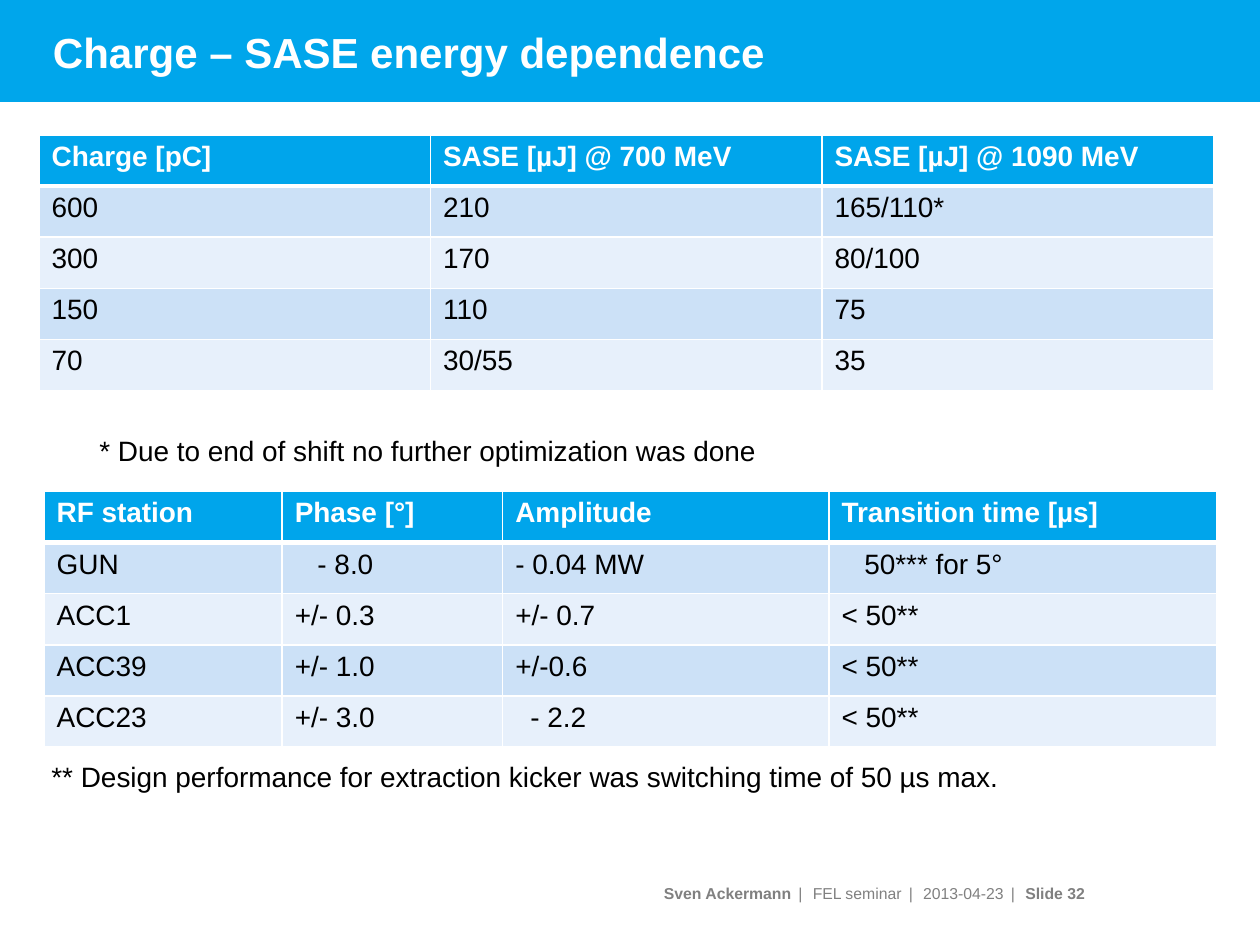
from dataclasses import dataclass

from lxml.etree import SubElement
from pptx import Presentation
from pptx.dml.color import RGBColor
from pptx.enum.shapes import MSO_SHAPE
from pptx.enum.text import MSO_ANCHOR, MSO_AUTO_SIZE, PP_ALIGN
from pptx.oxml.ns import qn
from pptx.util import Inches, Pt

COLORS = {
    "banner": "00A6EB",
    "header": "00A5EB",
    "band_dark": "CCE1F7",
    "band_light": "E7F0FB",
    "white": "FFFFFF",
    "text": "000000",
    "footer": "808080",
}
ROW_HEIGHT = 0.406
CELL_MARGIN = 0.1
SPACE_WIDTH = 0.06


@dataclass
class DataTable:
    left: float
    top: float
    widths: list[float]
    rows: list[list[str]]
    indents: dict[tuple[int, int], int]  # (row, column) -> indent in space widths


@dataclass
class Note:
    text: str
    left: float
    top: float
    width: float
    wrap: bool


TABLES = [
    DataTable(0.31, 1.07, [3.107] * 3, [
        ["Charge [pC]", "SASE [µJ] @ 700 MeV", "SASE [µJ] @ 1090 MeV"],
        ["600", "210", "165/110*"],
        ["300", "170", "80/100"],
        ["150", "110", "75"],
        ["70", "30/55", "35"],
    ], {}),
    DataTable(0.35, 3.9, [1.89, 1.75, 2.59, 3.08], [
        ["RF station", "Phase [°]", "Amplitude", "Transition time [µs]"],
        ["GUN", "- 8.0", "- 0.04 MW", "50*** for 5°"],
        ["ACC1", "+/- 0.3", "+/- 0.7", "< 50**"],
        ["ACC39", "+/- 1.0", "+/-0.6", "< 50**"],
        ["ACC23", "+/- 3.0", "- 2.2", "< 50**"],
    ], {(1, 1): 3, (1, 3): 3, (4, 2): 2}),
]
NOTES = [
    Note("* Due to end of shift no further optimization was done", 0.69, 3.39, 5.48, False),
    Note("** Design performance for extraction kicker was switching time of 50 µs max.",
         0.31, 5.98, 8.24, True),
]


def color(name: str) -> RGBColor:
    return RGBColor.from_string(COLORS[name])


def style(font, size: float, color_name: str, bold: bool = False) -> None:
    font.name = "Arial"
    font.size = Pt(size)
    font.bold = bold
    font.color.rgb = color(color_name)


def set_borders(cell, top: float, bottom: float) -> None:
    """Give the cell white borders, with its own top and bottom widths in points."""
    properties = cell._tc.get_or_add_tcPr()
    for side, width in (("L", 1), ("R", 1), ("T", top), ("B", bottom)):
        line = SubElement(properties, qn(f"a:ln{side}"), w=str(Pt(width)))
        fill = SubElement(line, qn("a:solidFill"))
        SubElement(fill, qn("a:srgbClr"), val=COLORS["white"])


def add_data_table(slide, data: DataTable) -> None:
    frame = slide.shapes.add_table(
        len(data.rows), len(data.widths), Inches(data.left), Inches(data.top),
        Inches(sum(data.widths)), Inches(ROW_HEIGHT * len(data.rows)))
    table = frame.table
    for column, width in zip(table.columns, data.widths):
        column.width = Inches(width)
    for r, texts in enumerate(data.rows):
        table.rows[r].height = Inches(ROW_HEIGHT)
        is_header = r == 0
        band = "header" if is_header else "band_dark" if r % 2 else "band_light"
        for c, text in enumerate(texts):
            cell = table.cell(r, c)
            set_borders(cell, top=3 if r == 1 else 1, bottom=3 if is_header else 1)
            cell.fill.solid()
            cell.fill.fore_color.rgb = color(band)
            cell.margin_left = Inches(CELL_MARGIN + SPACE_WIDTH * data.indents.get((r, c), 0))
            cell.text_frame.text = text
            style(cell.text_frame.paragraphs[0].runs[0].font, 16,
                  "white" if is_header else "text", is_header)


def add_note(slide, note: Note) -> None:
    box = slide.shapes.add_textbox(
        Inches(note.left), Inches(note.top), Inches(note.width), Inches(0.37))
    frame = box.text_frame
    frame.word_wrap = note.wrap
    frame.auto_size = MSO_AUTO_SIZE.SHAPE_TO_FIT_TEXT
    frame.text = note.text
    style(frame.paragraphs[0].runs[0].font, 16, "text")


def add_title(slide, text: str) -> None:
    banner = slide.shapes.add_shape(MSO_SHAPE.RECTANGLE, 0, 0, Inches(10), Inches(0.81))
    banner.shadow.inherit = False
    banner.fill.solid()
    banner.fill.fore_color.rgb = color("banner")
    banner.line.fill.background()

    title = slide.shapes.title
    banner._element.addnext(title._element)  # the title lies in front of the banner
    title.left, title.top = Inches(0.32), Inches(0.11)
    title.width, title.height = Inches(9.32), Inches(0.6)
    frame = title.text_frame
    frame.text = text
    frame.vertical_anchor = MSO_ANCHOR.MIDDLE
    frame.auto_size = MSO_AUTO_SIZE.NONE
    para = frame.paragraphs[0]
    para.alignment = PP_ALIGN.LEFT
    style(para.runs[0].font, 24, "white", True)


def add_footer(slide, author: str, details: list[str], number: str) -> None:
    box = slide.shapes.add_textbox(Inches(0.31), Inches(6.87), Inches(8.3), Inches(0.44))
    frame = box.text_frame
    frame.word_wrap = True
    frame.vertical_anchor = MSO_ANCHOR.MIDDLE
    frame.margin_right = 0
    para = frame.paragraphs[0]
    para.alignment = PP_ALIGN.RIGHT
    parts = [(author, True), *((detail, False) for detail in details), (number, True)]
    for i, (text, bold) in enumerate(parts):
        if i:
            separator = para.add_run()
            separator.text = " | "
            style(separator.font, 9, "footer")
            separator._r.get_or_add_rPr().set("spc", "167")  # widens the gaps
        span = para.add_run()
        span.text = text
        style(span.font, 9, "footer", bold)


def main() -> None:
    deck = Presentation()
    deck.slide_width, deck.slide_height = Inches(10), Inches(7.5)
    slide = deck.slides.add_slide(deck.slide_layouts[5])
    add_title(slide, "Charge – SASE energy dependence")
    add_footer(slide, "Sven Ackermann", ["FEL seminar", "2013-04-23"], "Slide 32")
    for data in TABLES:
        add_data_table(slide, data)
    for note in NOTES:
        add_note(slide, note)
    deck.save("out.pptx")


if __name__ == "__main__":
    main()
